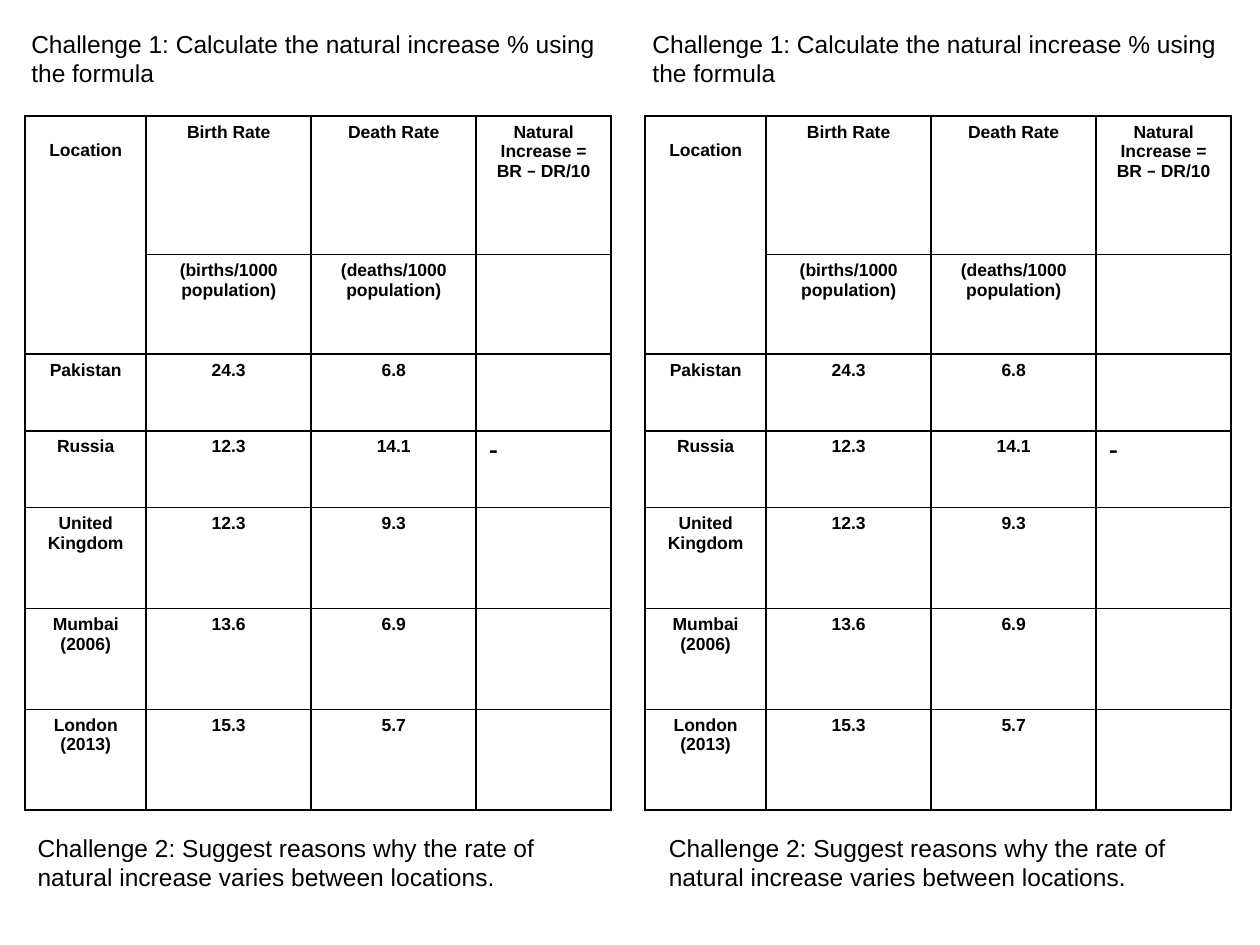
from collections import namedtuple
from dataclasses import dataclass

from lxml import etree
from pptx import Presentation
from pptx.dml.color import RGBColor
from pptx.enum.text import MSO_AUTO_SIZE, PP_ALIGN
from pptx.oxml.ns import qn
from pptx.util import Inches, Pt

CENTER, LEFT = PP_ALIGN.CENTER, PP_ALIGN.LEFT
FIT_SHAPE = MSO_AUTO_SIZE.SHAPE_TO_FIT_TEXT
BLANK_LAYOUT = 6

Box = namedtuple("Box", "left top width height")


@dataclass(frozen=True)
class Theme:
    ink: RGBColor = RGBColor(0, 0, 0)
    paper: RGBColor = RGBColor(255, 255, 255)
    font: str = "Arial"
    dash_font: str = "Karla"
    prompt_size: Pt = Pt(14)
    table_size: Pt = Pt(10)
    minus_size: Pt = Pt(14)
    border: Pt = Pt(1)


THEME = Theme()

CALCULATE = "Challenge 1: Calculate the natural increase % using the formula"
EXPLAIN = ("Challenge 2: Suggest reasons why the rate of natural increase "
           "varies between locations.")

COLUMN_WIDTHS = (0.96, 1.31, 1.31, 1.07)
ROW_HEIGHTS = (1.1, 0.79, 0.61, 0.61, 0.8, 0.8, 0.8)
MINUS = "-"
RATES = (
    ("Location", "Birth Rate", "Death Rate", "Natural Increase =\nBR – DR/10"),
    ("", "(births/1000 population)", "(deaths/1000 population)", ""),
    ("Pakistan", "24.3", "6.8", ""),
    ("Russia", "12.3", "14.1", MINUS),
    ("United Kingdom", "12.3", "9.3", ""),
    ("Mumbai (2006)", "13.6", "6.9", ""),
    ("London (2013)", "15.3", "5.7", ""),
)


def add_run(paragraph, text, **font_format):
    run = paragraph.add_run()
    run.text = text
    for name, value in font_format.items():
        setattr(run.font, name, value)
    run.font.color.rgb = THEME.ink


def add_prompt(slide, box, text):
    frame = slide.shapes.add_textbox(*map(Inches, box)).text_frame
    frame.word_wrap = True
    frame.auto_size = FIT_SHAPE
    add_run(frame.paragraphs[0], text, name=THEME.font, size=THEME.prompt_size)


def add_borders(cell):
    properties = cell._tc.get_or_add_tcPr()
    for side in ("lnL", "lnR", "lnT", "lnB"):
        line = etree.SubElement(properties, qn(f"a:{side}"), w=str(THEME.border))
        fill = etree.SubElement(line, qn("a:solidFill"))
        etree.SubElement(fill, qn("a:srgbClr"), val=str(THEME.ink))


def write_cell(cell, text):
    """Write one paragraph per line, with dashes in the dash font."""
    is_minus = text == MINUS
    for index, line in enumerate(text.split("\n")):
        frame = cell.text_frame
        paragraph = frame.add_paragraph() if index else frame.paragraphs[0]
        paragraph.alignment = LEFT if is_minus else CENTER
        if is_minus:
            paragraph.space_before = Pt(8)
        before, dash, after = line.partition("–")
        for part in filter(None, (before, dash, after)):
            add_run(paragraph, part, bold=True,
                    name=THEME.dash_font if part in (MINUS, "–") else THEME.font,
                    size=THEME.minus_size if is_minus else THEME.table_size)


def add_rates_table(slide, box):
    table = slide.shapes.add_table(
        len(RATES), len(COLUMN_WIDTHS), *map(Inches, box)).table
    table.first_row = table.horz_banding = False
    for column, width in zip(table.columns, COLUMN_WIDTHS):
        column.width = Inches(width)
    for row, height, texts in zip(table.rows, ROW_HEIGHTS, RATES):
        row.height = Inches(height)
        for cell, text in zip(row.cells, texts):
            add_borders(cell)
            cell.fill.solid()
            cell.fill.fore_color.rgb = THEME.paper
            if text:
                write_cell(cell, text)
    location = table.cell(0, 0)
    location.merge(table.cell(1, 0))
    location.margin_top = Inches(0.2)


def add_worksheet(slide, calculate_box, table_box, explain_box):
    add_rates_table(slide, table_box)
    add_prompt(slide, calculate_box, CALCULATE)
    add_prompt(slide, explain_box, EXPLAIN)


def main():
    presentation = Presentation()
    presentation.slide_width = Inches(10)
    presentation.slide_height = Inches(7.5)
    slide = presentation.slides.add_slide(presentation.slide_layouts[BLANK_LAYOUT])
    table_size = sum(COLUMN_WIDTHS), sum(ROW_HEIGHTS)
    for calculate_left, table_left, explain_left in ((0.15, 0.2, 0.2),
                                                     (5.08, 5.12, 5.21)):
        add_worksheet(slide,
                      Box(calculate_left, 0.18, 4.69, 0.59),
                      Box(table_left, 0.92, *table_size),
                      Box(explain_left, 6.56, 4.48, 0.81))
    presentation.save("out.pptx")


if __name__ == "__main__":
    main()
